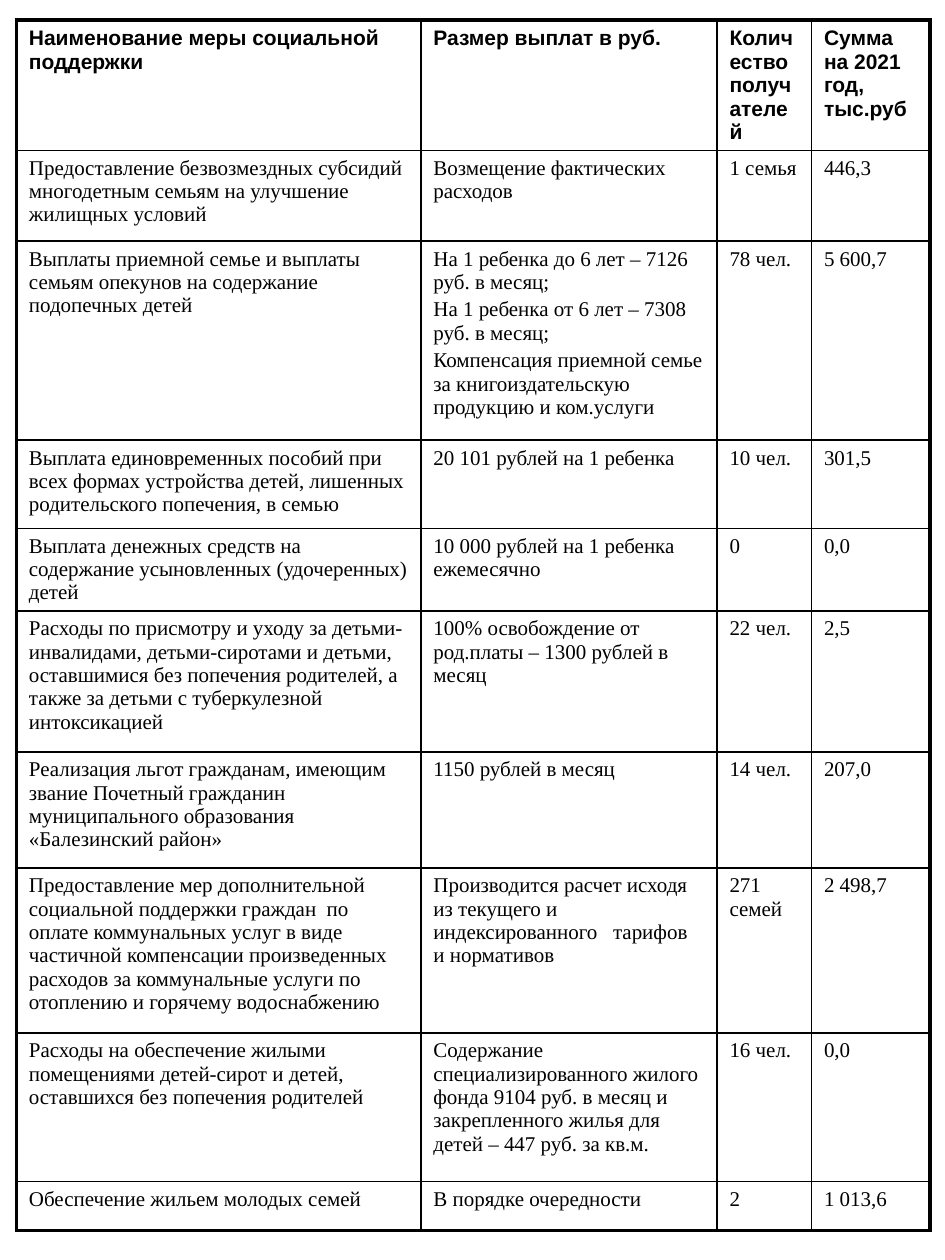
import lxml.etree
import pptx
import pptx.dml.color
import pptx.oxml.ns
import pptx.util

Inches = pptx.util.Inches
Pt = pptx.util.Pt

BLACK = pptx.dml.color.RGBColor(0, 0, 0)
OUTER_LINE = Pt(2.25)
INNER_LINE = Pt(1)

COLUMN_WIDTHS = [3.21, 2.35, 0.75, 0.94]
ROW_HEIGHTS = [0.86, 0.72, 1.58, 0.7, 0.47, 1.12, 0.92, 1.31, 1.18, 0.39]

HEADER = ["Наименование меры социальной поддержки", "Размер выплат в руб.",
          "Количество получателей", "Сумма на 2021 год, тыс.руб"]

# A line break in a cell text starts a new paragraph.
MEASURES = [
    ["Предоставление безвозмездных субсидий многодетным семьям на улучшение жилищных условий",
     "Возмещение фактических расходов", "1 семья", "446,3"],
    ["Выплаты приемной семье и выплаты семьям опекунов на содержание подопечных детей",
     "На 1 ребенка до 6 лет – 7126 руб. в месяц;\n"
     "На 1 ребенка от 6 лет – 7308 руб. в месяц;\n"
     "Компенсация приемной семье за книгоиздательскую продукцию и ком.услуги",
     "78 чел.", "5 600,7"],
    ["Выплата единовременных пособий при всех формах устройства детей, "
     "лишенных родительского попечения, в семью",
     "20 101 рублей на 1 ребенка", "10 чел.", "301,5"],
    ["Выплата денежных средств на содержание усыновленных (удочеренных) детей",
     "10 000 рублей на 1 ребенка ежемесячно", "0", "0,0"],
    ["Расходы по присмотру и уходу за детьми-инвалидами, детьми-сиротами и детьми, "
     "оставшимися без попечения родителей, а также за детьми с туберкулезной интоксикацией",
     "100% освобождение от род.платы – 1300 рублей в месяц", "22 чел.", "2,5"],
    ["Реализация льгот гражданам, имеющим звание Почетный гражданин "
     "муниципального образования «Балезинский район»",
     "1150 рублей в месяц", "14 чел.", "207,0"],
    ["Предоставление мер дополнительной социальной поддержки граждан  по оплате "
     "коммунальных услуг в виде частичной компенсации произведенных расходов "
     "за коммунальные услуги по отоплению и горячему водоснабжению",
     "Производится расчет исходя из текущего и индексированного   тарифов и нормативов",
     "271 семей", "2 498,7"],
    ["Расходы на обеспечение жилыми помещениями детей-сирот и детей, "
     "оставшихся без попечения родителей",
     "Содержание специализированного жилого фонда 9104 руб. в месяц "
     "и закрепленного жилья для детей – 447 руб. за кв.м.", "16 чел.", "0,0"],
    ["Обеспечение жильем молодых семей", "В порядке очередности", "2", "1 013,6"],
]


def set_borders(cell, widths):
    """Draw black cell borders; widths are in left, right, top, bottom order."""
    qn = pptx.oxml.ns.qn
    properties = cell._tc.get_or_add_tcPr()
    for position, (side, width) in enumerate(zip("LRTB", widths)):
        border = lxml.etree.Element(qn(f"a:ln{side}"), w=str(int(width)))
        fill = lxml.etree.SubElement(border, qn("a:solidFill"))
        lxml.etree.SubElement(fill, qn("a:srgbClr"), val=str(BLACK))
        properties.insert(position, border)


def fill_cell(cell, text, font_name, bold):
    cell.fill.background()
    cell.margin_left = cell.margin_right = Inches(0.1)
    cell.margin_top = cell.margin_bottom = Inches(0.05)
    frame = cell.text_frame
    for index, line in enumerate(text.split("\n")):
        paragraph = frame.add_paragraph() if index else frame.paragraphs[0]
        paragraph.space_before = Pt(2.4)
        run = paragraph.add_run()
        run.text = line
        run.font.name = font_name
        run.font.size = Pt(12)
        run.font.bold = bold
        run.font.color.rgb = BLACK


def add_support_table(slide, left, top, width, height):
    rows = [HEADER] + MEASURES
    last_row, last_column = len(rows) - 1, len(HEADER) - 1
    table_frame = slide.shapes.add_table(len(rows), len(HEADER), left, top, width, height)
    table = table_frame.table
    table.first_row = table.horz_banding = False
    for column, column_width in zip(table.columns, COLUMN_WIDTHS):
        column.width = Inches(column_width)
    for row, row_height in zip(table.rows, ROW_HEIGHTS):
        row.height = Inches(row_height)

    for r, texts in enumerate(rows):
        is_header = r == 0
        for c, text in enumerate(texts):
            cell = table.cell(r, c)
            fill_cell(cell, text, "Arial" if is_header else "Times New Roman", is_header)
            on_edge = (c == 0, c == last_column, r == 0, r == last_row)
            set_borders(cell, [OUTER_LINE if edge else INNER_LINE for edge in on_edge])


def main():
    presentation = pptx.Presentation()
    presentation.slide_width = Inches(7.5)
    presentation.slide_height = Inches(10)
    slide = presentation.slides.add_slide(presentation.slide_layouts[6])
    add_support_table(slide, Inches(0.13), Inches(0.16), Inches(7.24), Inches(9.73))
    presentation.save("out.pptx")


if __name__ == "__main__":
    main()
